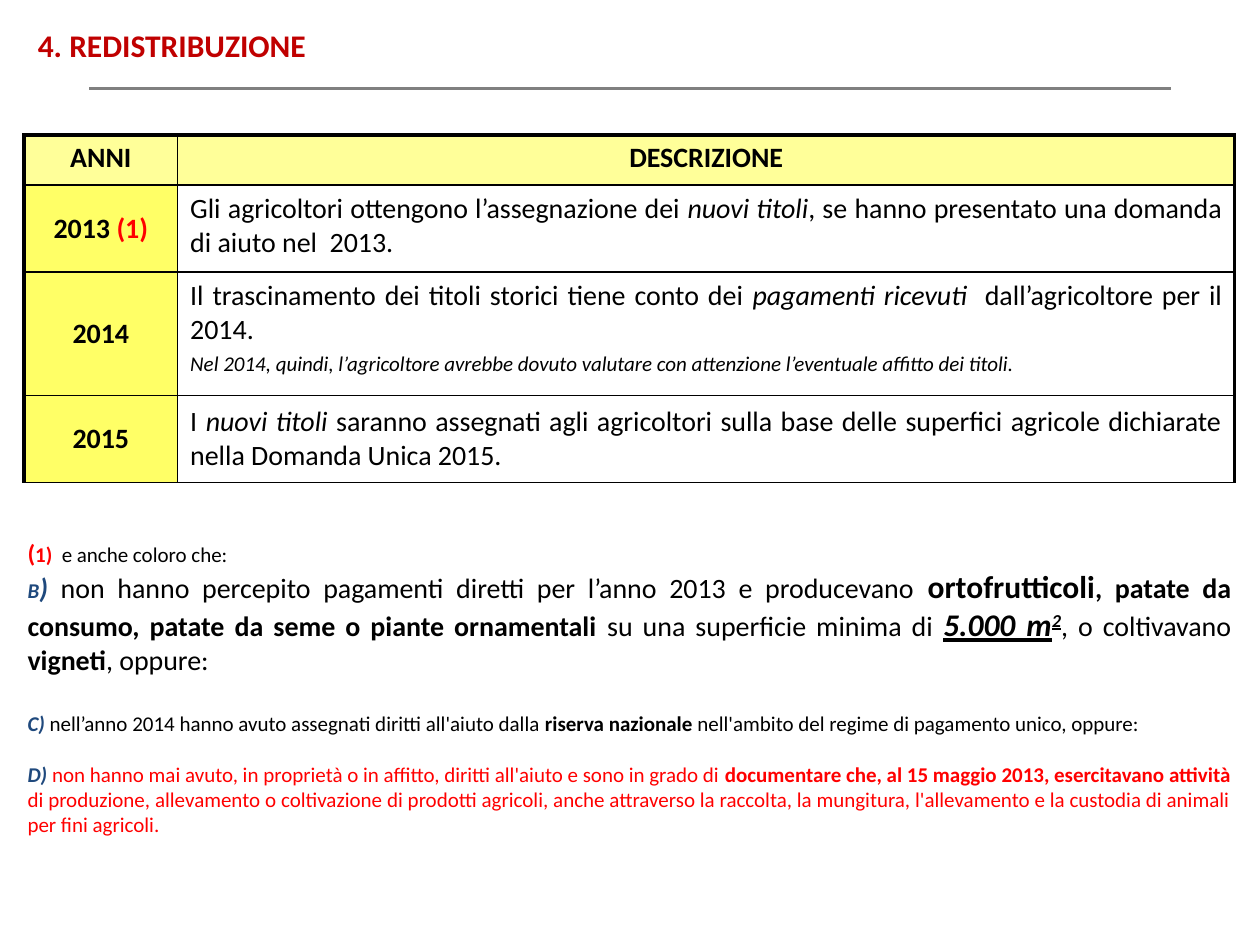
from lxml.etree import SubElement
from pptx import Presentation
from pptx.dml.color import RGBColor
from pptx.enum.shapes import MSO_CONNECTOR
from pptx.enum.text import MSO_ANCHOR, MSO_AUTO_SIZE, PP_ALIGN
from pptx.oxml import parse_xml
from pptx.oxml.ns import nsdecls, qn
from pptx.util import Inches, Pt

BLACK, RED, NAVY = "000000", "FF0000", "1F497D"
LEFT, MID, JUST = PP_ALIGN.LEFT, PP_ALIGN.CENTER, PP_ALIGN.JUSTIFY


def rgb(code):
    return RGBColor.from_string(code)


class Deck:
    font = "Calibri"

    def __init__(self):
        self.prs = Presentation()
        self.prs.slide_width, self.prs.slide_height = Inches(10), Inches(7.5)
        self.slide = self.prs.slides.add_slide(self.prs.slide_layouts[5])

    def fill_para(self, para, runs, align, gap=0):
        """Each run is (text, size, flags, colour); flags: b, i, u, s (superscript)."""
        para.alignment = align
        para.space_before = Pt(gap)
        for text, size, flags, color in runs:
            run = para.add_run()
            run.text = text
            font = run.font
            font.name, font.size = self.font, Pt(size)
            font.bold, font.italic = "b" in flags, "i" in flags
            font.underline = "u" in flags
            font.color.rgb = rgb(color)
            if "s" in flags:
                run._r.get_or_add_rPr().set("baseline", "30000")

    def fill_frame(self, frame, paras):
        """Each paragraph is (align, gap, runs)."""
        for i, (align, gap, runs) in enumerate(paras):
            para = frame.add_paragraph() if i else frame.paragraphs[0]
            self.fill_para(para, runs, align, gap)

    def title(self, text, x, y, w, h):
        box = self.slide.shapes.title
        box.left, box.top, box.width, box.height = map(Inches, (x, y, w, h))
        frame = box.text_frame
        frame.vertical_anchor = MSO_ANCHOR.TOP
        frame.auto_size = MSO_AUTO_SIZE.SHAPE_TO_FIT_TEXT
        self.fill_para(frame.paragraphs[0], [(text, 18, "b", "C00000")], LEFT)

    def rule(self, x1, x2, y):
        line = self.slide.shapes.add_connector(
            MSO_CONNECTOR.STRAIGHT, Inches(x1), Inches(y), Inches(x2), Inches(y))
        line.line.color.rgb = rgb("808080")
        line.line.width = Pt(1.75)
        SubElement(line._element.spPr, qn("a:effectLst"))

    def text(self, x, y, w, h, paras):
        box = self.slide.shapes.add_textbox(*map(Inches, (x, y, w, h)))
        frame = box.text_frame
        frame.word_wrap = True
        frame.auto_size = MSO_AUTO_SIZE.SHAPE_TO_FIT_TEXT
        self.fill_frame(frame, paras)

    def border(self, cell, widths):
        props = cell._tc.get_or_add_tcPr()
        for i, (side, width) in enumerate(zip("LRTB", widths)):
            props.insert(i, parse_xml(
                f'<a:ln{side} {nsdecls("a")} w="{Pt(width)}"><a:solidFill>'
                f'<a:srgbClr val="{BLACK}"/></a:solidFill></a:ln{side}>'))

    def table(self, x, y, cols, heights, rows):
        """Each cell is (fill, anchor, paragraphs)."""
        grid = self.slide.shapes.add_table(
            len(rows), len(cols), Inches(x), Inches(y),
            Inches(sum(cols)), Inches(sum(heights))).table
        grid.first_row = grid.horz_banding = False
        for col, width in zip(grid.columns, cols):
            col.width = Inches(width)
        for r, (row, height) in enumerate(zip(rows, heights)):
            grid.rows[r].height = Inches(height)
            for c, (fill, anchor, paras) in enumerate(row):
                cell = grid.cell(r, c)
                cell.fill.solid()
                cell.fill.fore_color.rgb = rgb(fill)
                cell.vertical_anchor = anchor
                self.fill_frame(cell.text_frame, paras)
                edges = (c == 0, c == len(cols) - 1, r == 0, False)
                self.border(cell, [2.25 if edge else 1 for edge in edges])


def head(text):
    return "FFFF99", MSO_ANCHOR.TOP, [(MID, 0, [(text, 16, "b", BLACK)])]


def year(text, *more):
    return "FFFF66", MSO_ANCHOR.MIDDLE, [(MID, 0, [(text, 16, "b", BLACK), *more])]


def about(before, term, after, *more, anchor=MSO_ANCHOR.TOP):
    """Description cell with one term in italics."""
    runs = [(before, 16, "", BLACK), (term, 16, "i", BLACK), (after, 16, "", BLACK)]
    return "FFFFFF", anchor, [(JUST, 0, runs), *more]


def main():
    deck = Deck()
    deck.rule(0.71, 9.29, 0.7)
    deck.title("4. REDISTRIBUZIONE", 0.2, 0.16, 9.61, 0.4)

    advice = (JUST, 2.4, [(
        "Nel 2014, quindi, l’agricoltore avrebbe dovuto valutare con attenzione "
        "l’eventuale affitto dei titoli.", 12, "i", BLACK)])
    deck.table(0.19, 1.07, [1.22, 8.39], [0.4, 0.69, 0.98, 0.69], [
        [head("ANNI"), head("DESCRIZIONE")],
        [year("2013 ", ("(1)", 16, "b", RED)),
         about("Gli agricoltori ottengono l’assegnazione dei ", "nuovi titoli",
               ", se hanno presentato una domanda di aiuto nel  2013. ")],
        [year("2014"),
         about("Il trascinamento dei titoli storici tiene conto dei ",
               "pagamenti ricevuti", "  dall’agricoltore per il 2014.", advice)],
        [year("2015"),
         about("I ", "nuovi titoli", " saranno assegnati agli agricoltori sulla base "
               "delle superfici agricole dichiarate nella Domanda Unica 2015. ",
               anchor=MSO_ANCHOR.MIDDLE)],
    ])

    deck.text(0.12, 4.22, 9.75, 2.49, [
        (LEFT, 0, [("(", 14, "b", RED), ("1)", 12, "b", RED),
                   ("  e anche coloro che:", 12, "", BLACK)]),
        (JUST, 0, [
            ("B", 12, "bi", NAVY), (")", 16, "bi", NAVY),
            (" non hanno percepito pagamenti diretti per l’anno 2013 e producevano ",
             16, "", BLACK),
            ("ortofrutticoli", 18, "b", BLACK),
            (", patate da consumo, patate da seme o piante ornamentali ",
             16, "b", BLACK),
            ("su una superficie minima di ", 16, "", BLACK),
            ("5.000 m", 18, "biu", BLACK), ("2", 18, "bius", BLACK),
            (", o coltivavano ", 16, "", BLACK), ("vigneti", 16, "b", BLACK),
            (", oppure:", 16, "", BLACK)]),
        (JUST, 19.5, [
            ("C)", 12, "bi", NAVY),
            (" nell’anno 2014 hanno avuto assegnati diritti all'aiuto dalla ",
             12, "", BLACK),
            ("riserva nazionale ", 12, "b", BLACK),
            ("nell'ambito del regime di pagamento unico, oppure:", 12, "", BLACK)]),
        (JUST, 14.6, [
            ("D) ", 12, "bi", NAVY),
            ("non hanno mai avuto, in proprietà o in affitto, diritti all'aiuto e "
             "sono in grado di ", 12, "", RED),
            ("documentare che, al 15 maggio 2013, esercitavano attività ",
             12, "b", RED),
            ("di produzione, allevamento o coltivazione di prodotti agricoli, anche "
             "attraverso la raccolta, la mungitura, l'allevamento e la custodia di "
             "animali per fini agricoli. ", 12, "", RED)]),
    ])
    deck.prs.save("out.pptx")


if __name__ == "__main__":
    main()
